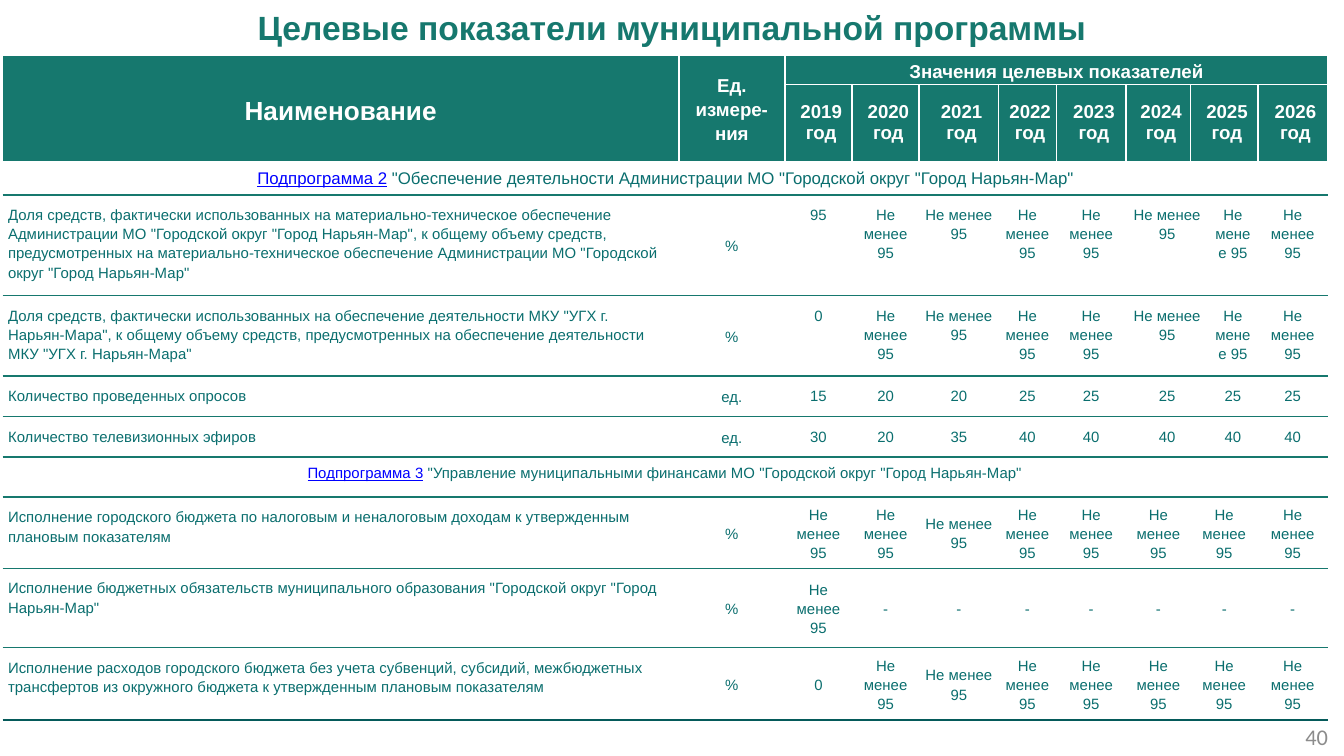
from lxml.etree import SubElement
from pptx import Presentation
from pptx.dml.color import RGBColor
from pptx.enum.text import MSO_ANCHOR as Anchor, PP_ALIGN as Align
from pptx.oxml.ns import qn
from pptx.util import Inches, Pt

TEAL, BODY, LINK, WHITE, DARK = "16786E", "0A6E6E", "0000FF", "FFFFFF", "055A5A"
AT_LEAST = "Не менее 95"
TITLE = "Целевые показатели муниципальной программы"
YEARS = range(2019, 2027)
COLUMNS = [5.03, 0.79, 0.5, 0.5, 0.59, 0.43, 0.52, 0.48, 0.13, 0.37, 0.52]
HEIGHTS = [0.21, 0.57, 0.25, 0.75, 0.6, 0.3, 0.3, 0.3, 0.53, 0.59, 0.54]
PROGRAMMES = [
    ("Подпрограмма 2",
     ' "Обеспечение деятельности Администрации МО "Городской округ "Город Нарьян-Мар"', 9,
     [('Доля средств, фактически использованных на материально-техническое обеспечение '
       'Администрации МО "Городской округ "Город Нарьян-Мар", к общему объему средств, '
       'предусмотренных на материально-техническое обеспечение Администрации МО '
       '"Городской округ "Город Нарьян-Мар"', "%", ["95"] + [AT_LEAST] * 7),
      ('Доля средств, фактически использованных на обеспечение деятельности МКУ '
       '"УГХ г. Нарьян-Мара", к общему объему средств, предусмотренных на обеспечение '
       'деятельности МКУ "УГХ г. Нарьян-Мара"', "%", ["0"] + [AT_LEAST] * 7),
      ("Количество проведенных опросов", "ед.", ["15", "20", "20"] + ["25"] * 5),
      ("Количество телевизионных эфиров", "ед.", ["30", "20", "35"] + ["40"] * 5)],
     Anchor.TOP, 0.07, (2, 3, 4, 5, 6, 7, 9, 10)),
    ("Подпрограмма 3",
     ' "Управление муниципальными финансами МО "Городской округ "Город Нарьян-Мар"', 8,
     [("Исполнение городского бюджета по налоговым и неналоговым доходам к утвержденным "
       "плановым показателям", "%", [AT_LEAST] * 8),
      ('Исполнение бюджетных обязательств муниципального образования "Городской округ '
       '"Город Нарьян-Мар"', "%", [AT_LEAST] + ["-"] * 7),
      ("Исполнение расходов городского бюджета без учета субвенций, субсидий, межбюджетных "
       "трансфертов из окружного бюджета к утвержденным плановым показателям", "%",
       ["0"] + [AT_LEAST] * 7)],
     Anchor.MIDDLE, 0.04, (2, 3, 4, 5, 6, 7, 8, 10)),
]


def add_run(paragraph, text, size, color, bold=False, underline=False, font="Arial"):
    run = paragraph.add_run()
    run.text = text
    run.font.name, run.font.size = font, Pt(size)
    run.font.bold, run.font.underline = bold, underline
    run.font.color.rgb = RGBColor.from_string(color)


def set_border(cell, side, color):
    line = SubElement(cell._tc.get_or_add_tcPr(), qn(f"a:ln{side}"), w=str(Pt(1)))
    if color:
        fill = SubElement(line, qn("a:solidFill"))
        SubElement(fill, qn("a:srgbClr"), val=color)
    else:
        SubElement(line, qn("a:noFill"))


def style_cell(cell, row, column):
    header = row < 2
    side = WHITE if header else None
    inner = WHITE if column > 1 else None
    top = {0: TEAL, 1: inner, 2: None}.get(row, TEAL)
    bottom = {0: inner, 1: None, len(HEIGHTS) - 1: DARK}.get(row, TEAL)
    for name, color in zip("LRTB", (side, side, top, bottom)):
        set_border(cell, name, color)
    cell.fill.solid()
    cell.fill.fore_color.rgb = RGBColor.from_string(TEAL if header else WHITE)


def write_cell(cell, runs, margins, align=Align.CENTER, anchor=Anchor.MIDDLE, spacing=1.15):
    left, top, right, bottom = (Inches(margin) for margin in margins)
    cell.margin_left, cell.margin_top = left, top
    cell.margin_right, cell.margin_bottom = right, bottom
    cell.vertical_anchor = anchor
    paragraph = cell.text_frame.paragraphs[0]
    paragraph.alignment, paragraph.line_spacing = align, spacing
    for run in runs:
        add_run(paragraph, *run)


def span(table, row, column, last_row, last_column):
    table.cell(row, column).merge(table.cell(last_row, last_column))


def write_header(table):
    tight = (0, 0.01, 0, 0.01)
    span(table, 0, 0, 1, 0)
    span(table, 0, 1, 1, 1)
    span(table, 0, 2, 0, 10)
    span(table, 1, 8, 1, 9)
    write_cell(table.cell(0, 0), [("Наименование", 14, WHITE, True)], tight)
    write_cell(table.cell(0, 1), [("Ед. измере-ния", 10, WHITE, True)], (0.08, 0, 0.08, 0))
    write_cell(table.cell(0, 2), [("Значения целевых показателей", 10, WHITE, True)], tight)
    for column, year in zip((2, 3, 4, 5, 6, 7, 8, 10), YEARS):
        write_cell(table.cell(1, column), [(f"{year} год", 10, WHITE, True)],
                   (0.04, 0.01, 0, 0.01), spacing=1.0)


def write_programmes(table):
    even = (0.04,) * 4
    row = 2
    for link, name, size, indicators, anchor, inset, columns in PROGRAMMES:
        padding = (0.04, inset, 0.04, inset)
        span(table, row, 0, row, 10)
        write_cell(table.cell(row, 0),
                   [(link, size, LINK, False, True), (name, size, BODY)], even, anchor=Anchor.TOP)
        for row, (indicator, unit, values) in enumerate(indicators, row + 1):
            merged = 7 if 9 in columns else 8
            span(table, row, merged, row, merged + 1)
            write_cell(table.cell(row, 0), [(indicator, 8, BODY)],
                       (0.04, 0.07, 0.06, 0.07), Align.LEFT, Anchor.TOP)
            write_cell(table.cell(row, 1), [(unit, 8, BODY)], even)
            for column, value in zip(columns, values):
                write_cell(table.cell(row, column), [(value, 8, BODY)], padding, anchor=anchor)
        row += 1


def main():
    presentation = Presentation()
    presentation.slide_width = Inches(10)
    presentation.slide_height = presentation.slide_width * 9 // 16
    slide = presentation.slides.add_slide(presentation.slide_layouts[5])

    title = slide.shapes.title
    title.left, title.top, title.width, title.height = map(Inches, (0, 0, 10, 0.4))
    paragraph = title.text_frame.paragraphs[0]
    paragraph.alignment = Align.CENTER
    add_run(paragraph, TITLE, 18, TEAL, True)

    frame = slide.shapes.add_table(len(HEIGHTS), len(COLUMNS), Inches(0.02), Inches(0.42),
                                   Inches(sum(COLUMNS)), Inches(sum(HEIGHTS)))
    table = frame.table
    table.first_row = table.horz_banding = False
    for column, width in zip(table.columns, COLUMNS):
        column.width = Inches(width)
    for row, (table_row, height) in enumerate(zip(table.rows, HEIGHTS)):
        table_row.height = Inches(height)
        for column, cell in enumerate(table_row.cells):
            style_cell(cell, row, column)
    write_header(table)
    write_programmes(table)

    number = slide.shapes.add_textbox(*map(Inches, (7.65, 5.33, 2.33, 0.3)))
    number.text_frame.word_wrap = True
    number.text_frame.vertical_anchor = Anchor.MIDDLE
    paragraph = number.text_frame.paragraphs[0]
    paragraph.alignment = Align.RIGHT
    add_run(paragraph, "40", 12, "8C8C8C", font="Calibri")

    presentation.save("out.pptx")


if __name__ == "__main__":
    main()
